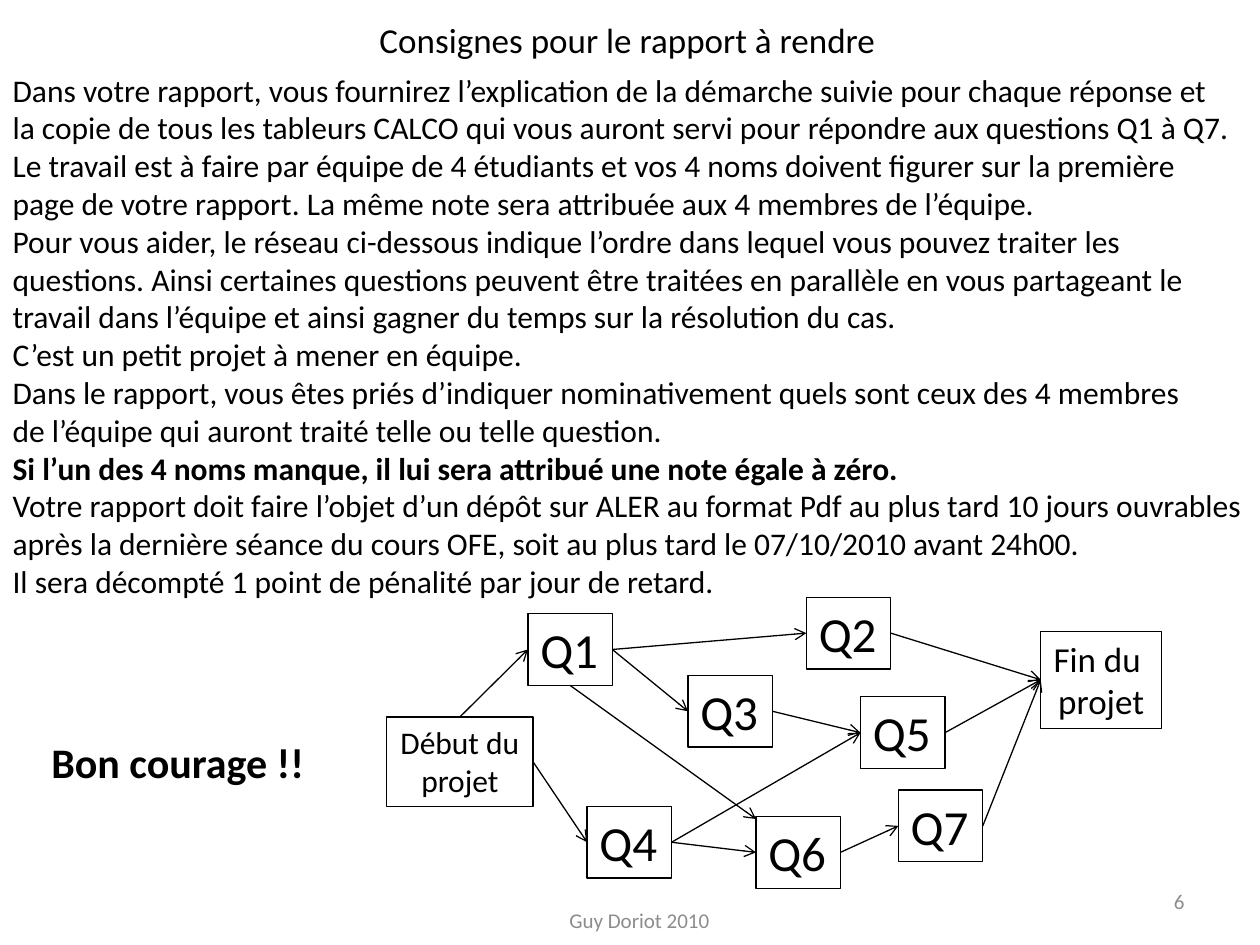
from lxml import etree
from pptx import Presentation
from pptx.dml.color import RGBColor
from pptx.enum import shapes, text
from pptx.oxml.ns import qn
from pptx.util import Inches, Pt

BLACK, GREY = "000000", "8C8C8C"
TOP, LEFT, BOTTOM, RIGHT = range(4)  # connection sites of a rectangle
CENTER = text.PP_ALIGN.CENTER

INSTRUCTIONS = [
    "Dans votre rapport, vous fournirez l’explication de la démarche suivie pour chaque réponse et",
    "la copie de tous les tableurs CALCO qui vous auront servi pour répondre aux questions Q1 à Q7.",
    "Le travail est à faire par équipe de 4 étudiants et vos 4 noms doivent figurer sur la première",
    "page de votre rapport. La même note sera attribuée aux 4 membres de l’équipe.",
    "Pour vous aider, le réseau ci-dessous indique l’ordre dans lequel vous pouvez traiter les",
    "questions. Ainsi certaines questions peuvent être traitées en parallèle en vous partageant le",
    "travail dans l’équipe et ainsi gagner du temps sur la résolution du cas.",
    "C’est un petit projet à mener en équipe.",
    "Dans le rapport, vous êtes priés d’indiquer nominativement quels sont ceux des 4 membres",
    "de l’équipe qui auront traité telle ou telle question.",
    "Si l’un des 4 noms manque, il lui sera attribué une note égale à zéro.",
    "Votre rapport doit faire l’objet d’un dépôt sur ALER au format Pdf au plus tard 10 jours ouvrables",
    "après la dernière séance du cours OFE, soit au plus tard le 07/10/2010 avant 24h00.",
    "Il sera décompté 1 point de pénalité par jour de retard.",
]
WARNING = 10  # index of the bold line

QUESTIONS = {
    "Q1": (4.19, 4.87), "Q2": (6.4, 4.74), "Q3": (5.46, 5.36), "Q4": (4.66, 6.4),
    "Q5": (6.83, 5.53), "Q6": (6, 6.48), "Q7": (7.13, 6.27),
}
LINKS = [
    ("Q1", "Q2"), ("Q1", "Q3"), ("Début", "Q4"), ("Q3", "Q5"), ("Q4", "Q5"), ("Q4", "Q6"),
    ("Q6", "Q7"), ("Q7", "Fin"), ("Q5", "Fin"), ("Q2", "Fin"),
]


def rgb(color):
    return RGBColor.from_string(color)


def place(sp, left, top, width, height):
    sp.left, sp.top = Inches(left), Inches(top)
    sp.width, sp.height = Inches(width), Inches(height)


def write(sp, lines, size, color=BLACK, bold=False, align=text.PP_ALIGN.LEFT,
          anchor=text.MSO_ANCHOR.TOP, wrap=False):
    tf = sp.text_frame
    tf.text = "\n".join(lines)
    tf.word_wrap = wrap
    tf.auto_size = text.MSO_AUTO_SIZE.NONE
    tf.vertical_anchor = anchor
    for p in tf.paragraphs:
        p.alignment = align
        p.space_before = Pt(0)
        p.font.name, p.font.size, p.font.bold = "Calibri", Pt(size), bold
        p.font.color.rgb = rgb(color)


def add_label(s, box, label, size, **style):
    sp = s.shapes.add_textbox(*map(Inches, box))
    write(sp, [label], size, **style)


def add_step(s, box, lines, size, align=CENTER):
    sp = s.shapes.add_shape(shapes.MSO_SHAPE.RECTANGLE, *map(Inches, box))
    sp.shadow.inherit = False
    sp.fill.background()
    sp.line.color.rgb = rgb(BLACK)
    sp.line.width = Pt(0.75)
    write(sp, lines, size, align=align)
    return sp


def add_arrow(s, start, start_site, end=None, end_site=LEFT, end_at=(0, 0)):
    """Link two steps, or lead from a step to the point end_at."""
    x, y = map(Inches, end_at)
    cx = s.shapes.add_connector(shapes.MSO_CONNECTOR.STRAIGHT, 0, 0, x, y)
    cx.begin_connect(start, start_site)
    if end is not None:
        cx.end_connect(end, end_site)
    cx.line.color.rgb = rgb(BLACK)
    cx.line.width = Pt(0.75)
    etree.SubElement(cx.line._get_or_add_ln(), qn("a:tailEnd"), type="arrow")
    etree.SubElement(cx._element.spPr, qn("a:effectLst"))


def fill_body(body):
    place(body, 0, 0.51, 10.13, 4.34)
    write(body, INSTRUCTIONS, 18)
    for p in body.text_frame.paragraphs:
        pPr = p._p.get_or_add_pPr()
        pPr.set("marL", "0")
        pPr.set("indent", "0")
        pPr.insert_element_before(pPr.makeelement(qn("a:buNone")), "a:tabLst", "a:defRPr")
    body.text_frame.paragraphs[WARNING].font.bold = True


def draw_network(s):
    steps = {name: add_step(s, (*at, 0.67, 0.57), [name], 28, text.PP_ALIGN.LEFT)
             for name, at in QUESTIONS.items()}
    steps["Début"] = add_step(s, (3.07, 5.69, 1.16, 0.71), ["Début du", "projet"], 18)
    steps["Fin"] = add_step(s, (8.26, 5.01, 0.96, 0.77), ["Fin du ", "projet"], 20)
    for start, end in LINKS:
        add_arrow(s, steps[start], RIGHT, steps[end])
    add_arrow(s, steps["Début"], TOP, steps["Q1"])
    add_arrow(s, steps["Q1"], BOTTOM, end_at=(6, 6.5))


def main():
    prs = Presentation()
    prs.slide_width, prs.slide_height = Inches(10), Inches(7.5)
    s = prs.slides.add_slide(prs.slide_layouts[1])
    middle = text.MSO_ANCHOR.MIDDLE

    title = s.shapes.title
    place(title, 0.48, 0, 9, 0.63)
    write(title, ["Consignes pour le rapport à rendre"], 20, align=CENTER, anchor=middle, wrap=True)
    fill_body(s.placeholders[1])
    add_label(s, (0.31, 5.8, 2.23, 0.5), "Bon courage !!", 24, bold=True)
    draw_network(s)
    add_label(s, (7.17, 6.95, 2.33, 0.4), "6", 12, color=GREY,
              align=text.PP_ALIGN.RIGHT, anchor=middle, wrap=True)
    add_label(s, (3.49, 7.1, 3.17, 0.4), "Guy Doriot 2010", 12, color=GREY,
              align=CENTER, anchor=middle, wrap=True)
    prs.save("out.pptx")


if __name__ == "__main__":
    main()
